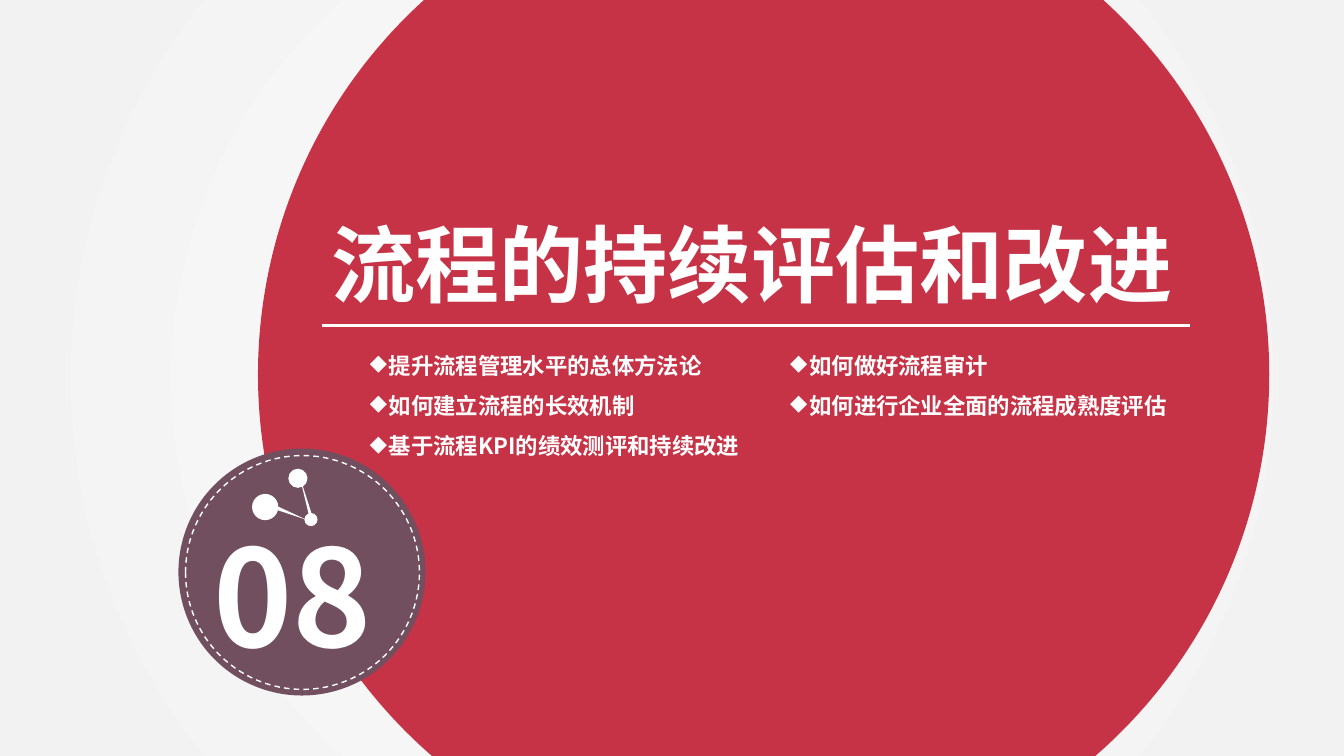
from lxml import etree
from pptx import Presentation, util as u
from pptx.dml.color import RGBColor
from pptx.enum import dml, shapes as kinds, text
from pptx.oxml import ns

WIDTH, HEIGHT = u.Inches(13.33), u.Inches(7.5)
FONT = "Noto Sans CJK SC"
WHITE, RED, PLUM = "FFFFFF", "C73346", "724F5F"
OVAL = kinds.MSO_SHAPE.OVAL
TRIANGLE = kinds.MSO_SHAPE.ISOSCELES_TRIANGLE

TITLE = "流程的持续评估和改进"
TOPICS_LEFT = ["提升流程管理水平的总体方法论", "如何建立流程的长效机制",
               "基于流程KPI的绩效测评和持续改进"]
TOPICS_RIGHT = ["如何做好流程审计", "如何进行企业全面的流程成熟度评估"]


def across(percent):
    return u.Emu(round(WIDTH * percent / 100))


def down(percent):
    return u.Emu(round(HEIGHT * percent / 100))


def color(hex_string):
    return RGBColor.from_string(hex_string)


def add_element(parent, tag, **attributes):
    return etree.SubElement(parent, ns.qn(tag), attributes)


def set_background(slide):
    """Fill the slide with a radial gradient from white to light grey."""
    fill = slide.background.fill
    fill.gradient()
    for stop, position, shade in zip(fill.gradient_stops, (0, 0.91), (WHITE, "F2F2F2")):
        stop.position = position
        stop.color.rgb = color(shade)
    gradient = slide.element.find(".//" + ns.qn("a:gradFill"))
    gradient.remove(gradient.find(ns.qn("a:lin")))
    radial = add_element(gradient, "a:path", path="circle")
    add_element(radial, "a:fillToRect", l="50000", t="50000", r="50000", b="50000")


def add_centred(parent, kind, x, y, width, height, fill=None, rotation=0):
    """Place a shape by its centre; both of its sides are percent of the slide height."""
    wide, high = down(width), down(height)
    shape = parent.shapes.add_shape(
        kind, across(x) - wide // 2, down(y) - high // 2, wide, high)
    shape.rotation = rotation
    shape.shadow.inherit = False
    shape.line.fill.background()
    if fill:
        shape.fill.solid()
        shape.fill.fore_color.rgb = color(fill)
    else:
        shape.fill.background()
    return shape


def add_circle(parent, x, y, diameter, fill=None):
    return add_centred(parent, OVAL, x, y, diameter, diameter, fill)


def format_text(frame, size):
    frame.vertical_anchor = text.MSO_ANCHOR.TOP
    for paragraph in frame.paragraphs:
        paragraph.alignment = text.PP_ALIGN.LEFT
        for run in paragraph.runs:
            run.font.size = u.Pt(size)
            run.font.bold = True
            run.font.color.rgb = color(WHITE)
            run.font.name = FONT
            add_element(run._r.get_or_add_rPr(), "a:ea", typeface=FONT)


def add_text(parent, content, left, top, width, height, size, wrap=True):
    box = parent.shapes.add_textbox(across(left), down(top), across(width), down(height))
    box.text_frame.text = content
    box.text_frame.word_wrap = wrap
    format_text(box.text_frame, size)
    return box.text_frame


def add_topics(slide, topics, left):
    frame = add_text(slide, "\n".join(topics), left, 44.13, 36.31, 5.33 * len(topics) + 1.4, 16)
    indent = u.Inches(0.19)
    for paragraph in frame.paragraphs:
        paragraph.line_spacing = 1.5
        properties = paragraph._p.get_or_add_pPr()
        properties.set("marL", str(indent))
        properties.set("indent", str(-indent))
        add_element(properties, "a:buChar", char="◆")


def add_title(slide):
    title = slide.shapes.title
    title.left, title.top = across(23.93), down(27.47)
    title.width, title.height = across(66.17), down(14.8)
    title.text_frame.text = TITLE
    title.text_frame.word_wrap = True
    title.text_frame.auto_size = text.MSO_AUTO_SIZE.NONE
    format_text(title.text_frame, 60)
    title.text_frame.paragraphs[0].line_spacing = 1.0
    title.element.getparent().append(title.element)  # bring in front of the circles


def add_rule(slide):
    rule = slide.shapes.add_connector(
        kinds.MSO_CONNECTOR.STRAIGHT, across(23.93), down(43.07), across(88.52), down(43.07))
    rule.line.color.rgb = color(WHITE)
    rule.line.width = u.Pt(2.25)
    add_element(rule.element.spPr, "a:effectLst")


def add_badge(slide, number):
    """Group the chapter number with its dashed ring and three linked dots."""
    badge = slide.shapes.add_group_shape()
    add_circle(badge, 22.47, 75.67, 32.67, PLUM)
    add_text(badge, number, 15.15, 67.2, 13.95, 22.93, 96, wrap=False)
    ring = add_circle(badge, 22.51, 75.73, 30.93)
    ring.line.color.rgb = color(WHITE)
    ring.line.width = u.Pt(1)
    ring.line.dash_style = dml.MSO_LINE.DASH
    for x, y, diameter in [(19.73, 67.07, 3.47), (23.14, 68.73, 1.73), (22.17, 63.27, 2.53)]:
        add_circle(badge, x, y, diameter, WHITE)
    for x, y, width, height, rotation in [(21.27, 67.67, 0.67, 6, 111.7),
                                          (22.69, 65.53, 0.4, 5.47, 344.3)]:
        add_centred(badge, TRIANGLE, x, y, width, height, WHITE, rotation)


def main():
    presentation = Presentation()
    presentation.slide_width, presentation.slide_height = WIDTH, HEIGHT
    slide = presentation.slides.add_slide(presentation.slide_layouts.get_by_name("Title Only"))
    set_background(slide)
    add_circle(slide, 56.82, 49.53, 133.73, RED)
    add_badge(slide, "08")
    add_title(slide)
    add_rule(slide)
    add_topics(slide, TOPICS_LEFT, 26.78)
    add_topics(slide, TOPICS_RIGHT, 58.06)
    presentation.save("out.pptx")


if __name__ == "__main__":
    main()
